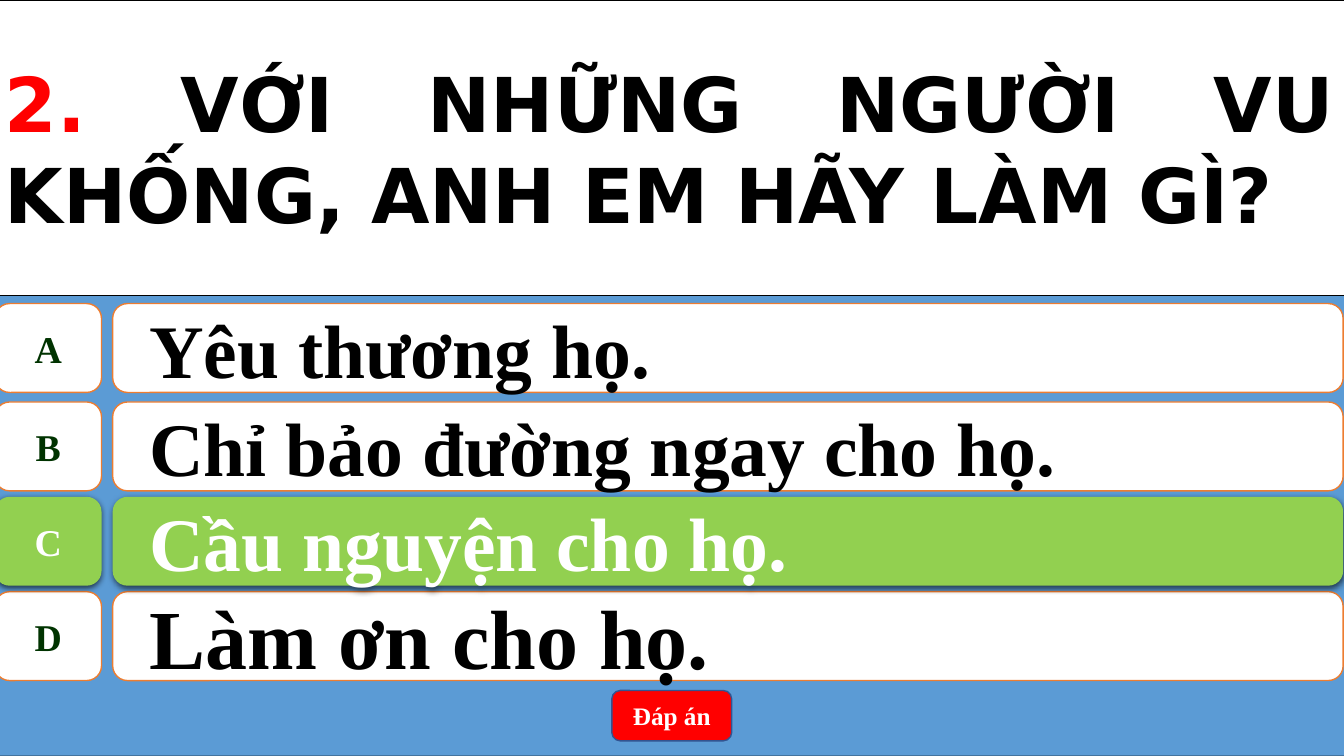
"""Build a quiz slide with one question, four answers and the right one in green."""
from lxml import etree
from pptx import Presentation
from pptx import util as u
from pptx.dml.color import RGBColor
from pptx.enum import shapes, text
from pptx.oxml import ns

WHITE = RGBColor(0xFF, 0xFF, 0xFF)
BLACK = RGBColor(0x00, 0x00, 0x00)
RED = RGBColor(0xFF, 0x00, 0x00)
BLUE = RGBColor(0x5B, 0x9B, 0xD5)
BLUE_EDGE = RGBColor(0x43, 0x73, 0x9E)
BUTTON_EDGE = RGBColor(0x32, 0x54, 0x91)
ORANGE = RGBColor(0xED, 0x7D, 0x31)
DARK_GREEN = RGBColor(0x00, 0x33, 0x00)
GREEN = RGBColor(0x92, 0xD0, 0x50)
SERIF = "Times New Roman"
LEFT, FULL_WIDTH, ROW_HEIGHT = -0.13, 34.01, 2.24

prs = Presentation()
prs.slide_width, prs.slide_height = u.Cm(33.87), u.Cm(19.05)
slide = prs.slides.add_slide(prs.slide_layouts[5])


def add_box(kind, left, top, width, height, fill, edge):
    box = slide.shapes.add_shape(kind, *map(u.Cm, (left, top, width, height)))
    box.shadow.inherit = False
    box.fill.solid()
    box.fill.fore_color.rgb = fill
    if edge is None:
        box.line.fill.background()
    else:
        box.line.color.rgb = edge
        box.line.width = u.Pt(1)
    return box


def write(box, words, size, color, align):
    box.text_frame.text = words
    box.text_frame.vertical_anchor = text.MSO_ANCHOR.MIDDLE
    paragraph = box.text_frame.paragraphs[0]
    paragraph.alignment = align
    font = paragraph.runs[0].font
    font.name, font.size, font.bold = SERIF, u.Pt(size), True
    font.color.rgb = color


add_box(shapes.MSO_SHAPE.RECTANGLE, LEFT, 0, FULL_WIDTH, 19.05, BLUE, BLUE_EDGE)

answers = [
    ("A", "Yêu thương họ.", 7.65, 54, False),
    ("B", "Chỉ bảo đường ngay cho họ.", 10.13, 54, False),
    ("D", "Làm ơn cho họ.", 14.91, 60, False),
    ("C", "Cầu nguyện cho họ.", 12.52, 54, True),
]
for letter, answer, top, size, correct in answers:
    fill, edge = (GREEN, None) if correct else (WHITE, ORANGE)
    letter_box = add_box(shapes.MSO_SHAPE.FLOWCHART_ALTERNATE_PROCESS,
                         LEFT, top, 2.69, ROW_HEIGHT, fill, edge)
    write(letter_box, letter, 27, WHITE if correct else DARK_GREEN, text.PP_ALIGN.CENTER)
    letter_box.text_frame.word_wrap = False

    answer_box = add_box(shapes.MSO_SHAPE.ROUNDED_RECTANGLE,
                         2.84, top, 31.01, ROW_HEIGHT, fill, edge)
    write(answer_box, answer, size, WHITE if correct else BLACK, text.PP_ALIGN.LEFT)
    indents = answer_box.text_frame.paragraphs[0]._p.get_or_add_pPr()
    indents.set("marL", str(u.Cm(1.27)))
    indents.set("indent", str(u.Cm(-0.71)))

    if correct:
        for box in (letter_box, answer_box):
            effects = box._element.spPr.find(ns.qn("a:effectLst"))
            shadow = etree.SubElement(effects, ns.qn("a:outerShdw"), blurRad=str(u.Pt(4.5)),
                                      dist=str(u.Pt(1.5)), dir="5400000", rotWithShape="0")
            shade = etree.SubElement(shadow, ns.qn("a:srgbClr"), val=str(BLACK))
            etree.SubElement(shade, ns.qn("a:alpha"), val="63000")

reveal = add_box(shapes.MSO_SHAPE.ROUNDED_RECTANGLE, 15.42, 17.4, 3.02, 1.27, RED, BUTTON_EDGE)
write(reveal, "Đáp án", 18, WHITE, text.PP_ALIGN.CENTER)

question = slide.shapes.title
question.left, question.top = u.Cm(LEFT), u.Cm(0)
question.width, question.height = u.Cm(FULL_WIDTH), u.Cm(7.44)
question.fill.solid()
question.fill.fore_color.rgb = WHITE
question.line.color.rgb = BLACK
question.line.width = u.Pt(1)
question.text_frame.word_wrap = True
question.text_frame.auto_size = text.MSO_AUTO_SIZE.NONE
question.text_frame.vertical_anchor = text.MSO_ANCHOR.MIDDLE
wording = question.text_frame.paragraphs[0]
wording.alignment = text.PP_ALIGN.JUSTIFY
wording.line_spacing = 1.0
for words, color in (("2. ", RED), ("VỚI NHỮNG NGƯỜI VU KHỐNG, ANH EM HÃY LÀM GÌ?", BLACK)):
    run = wording.add_run()
    run.text = words
    run.font.name, run.font.size, run.font.bold = "DejaVu Sans", u.Pt(54), True
    run.font.color.rgb = color
slide.shapes._spTree.append(question._element)

prs.save("out.pptx")
